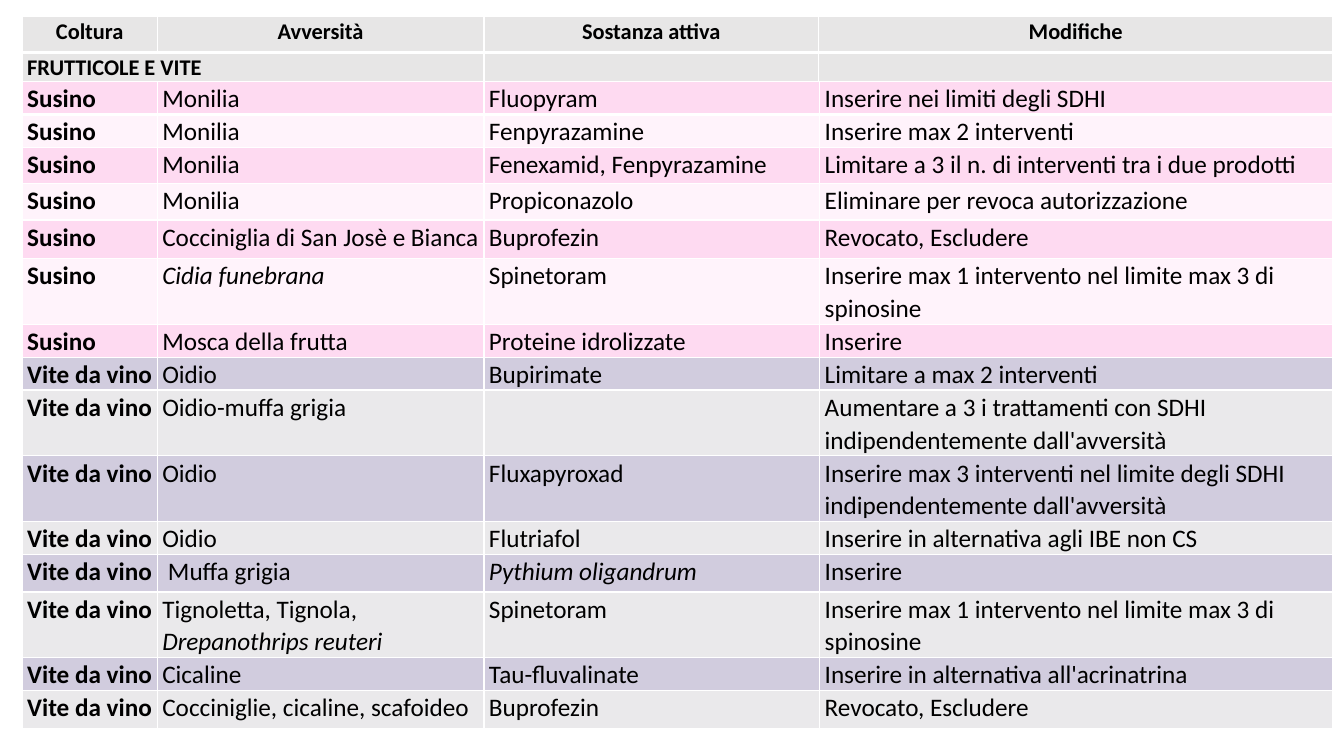
import pptx
import pptx.dml.color
import pptx.enum.text
import pptx.oxml.ns
import pptx.util
from lxml import etree

Inches = pptx.util.Inches
RGBColor = pptx.dml.color.RGBColor

BLACK = RGBColor(0x00, 0x00, 0x00)
WHITE = RGBColor(0xFF, 0xFF, 0xFF)
HEADER_GRAY = RGBColor(0xE7, 0xE6, 0xE6)
# Dark and light band of each crop
BANDS = {
    "Susino": (RGBColor(0xFE, 0xDA, 0xF1), RGBColor(0xFF, 0xF3, 0xFB)),
    "Vite da vino": (RGBColor(0xD1, 0xCC, 0xDE), RGBColor(0xEA, 0xE9, 0xEB)),
}
FONT = "Calibri"

HEADINGS = ["Coltura", "Avversità", "Sostanza attiva", "Modifiche"]
SECTION = "FRUTTICOLE E VITE"

# Row height and pest, substance, change for each crop; asterisks enclose italics
TREATMENTS = {
    "Susino": [
        (0.32, "Monilia", "Fluopyram", "Inserire nei limiti degli SDHI"),
        (0.32, "Monilia", "Fenpyrazamine", "Inserire max 2 interventi"),
        (0.36, "Monilia", "Fenexamid, Fenpyrazamine",
         "Limitare a 3 il n. di interventi tra i due prodotti"),
        (0.36, "Monilia", "Propiconazolo", "Eliminare per revoca autorizzazione"),
        (0.38, "Cocciniglia di San Josè e Bianca", "Buprofezin", "Revocato, Escludere"),
        (0.65, "*Cidia funebrana*", "Spinetoram",
         "Inserire max 1 intervento nel limite max 3 di spinosine"),
        (0.32, "Mosca della frutta", "Proteine idrolizzate", "Inserire"),
    ],
    "Vite da vino": [
        (0.32, "Oidio", "Bupirimate", "Limitare a max 2 interventi"),
        (0.65, "Oidio-muffa grigia", "",
         "Aumentare a 3 i trattamenti con SDHI indipendentemente dall'avversità"),
        (0.65, "Oidio", "Fluxapyroxad",
         "Inserire max 3 interventi nel limite degli SDHI indipendentemente dall'avversità"),
        (0.32, "Oidio", "Flutriafol", "Inserire in alternativa agli IBE non CS"),
        (0.37, " Muffa grigia", "*Pythium oligandrum*", "Inserire"),
        (0.65, "Tignoletta, Tignola, *Drepanothrips reuteri*", "Spinetoram",
         "Inserire max 1 intervento nel limite max 3 di spinosine"),
        (0.32, "Cicaline", "Tau-fluvalinate", "Inserire in alternativa all'acrinatrina"),
        (0.38, "Cocciniglie, cicaline, scafoideo", "Buprofezin", "Revocato, Escludere"),
    ],
}


def set_borders(cell, bottom_width):
    """Draw white borders, 1 pt except at the bottom."""
    properties = cell._tc.get_or_add_tcPr()
    for index, side in enumerate(("lnL", "lnR", "lnT", "lnB")):
        width = bottom_width if side == "lnB" else 1
        border = etree.Element(pptx.oxml.ns.qn("a:" + side), w=str(pptx.util.Pt(width)))
        fill = etree.SubElement(border, pptx.oxml.ns.qn("a:solidFill"))
        etree.SubElement(fill, pptx.oxml.ns.qn("a:srgbClr"), val=str(WHITE))
        properties.insert(index, border)


def fill_cell(cell, text, color, size, bold=False, align=None, bottom_width=1):
    cell.fill.solid()
    cell.fill.fore_color.rgb = color
    set_borders(cell, bottom_width)
    cell.margin_left = cell.margin_right = Inches(0.05)
    cell.margin_top = cell.margin_bottom = 0
    paragraph = cell.text_frame.paragraphs[0]
    paragraph.line_spacing = 1.07
    paragraph.alignment = align
    if not text:
        # Keep an empty cell from stretching its row
        etree.SubElement(paragraph._p, pptx.oxml.ns.qn("a:endParaRPr"), sz=str(size * 100))
    for index, part in enumerate(text.split("*")):
        if part:
            run = paragraph.add_run()
            run.text = part
            run.font.name = FONT
            run.font.size = pptx.util.Pt(size)
            run.font.bold = bold
            run.font.italic = index % 2 == 1
            run.font.color.rgb = BLACK


def add_grid(slide, left, top, widths, heights):
    """Add a plain table with the given column widths and row heights."""
    grid = slide.shapes.add_table(
        len(heights), len(widths), Inches(left), Inches(top),
        Inches(sum(widths)), Inches(sum(heights))).table
    grid.first_row = grid.horz_banding = False
    for column, width in zip(grid.columns, widths):
        column.width = Inches(width)
    for row, height in zip(grid.rows, heights):
        row.height = Inches(height)
    return grid


def add_header(slide, left, top):
    header = add_grid(slide, left, top, [1.34, 3.24, 3.32, 5.1], [0.36, 0.29])
    for column, heading in enumerate(HEADINGS):
        fill_cell(header.cell(0, column), heading, HEADER_GRAY, 16, bold=True,
                  align=pptx.enum.text.PP_ALIGN.CENTER, bottom_width=3)
        fill_cell(header.cell(1, column), "" if column else SECTION,
                  HEADER_GRAY, 16, bold=True)
    section = header.cell(1, 0)
    section.merge(header.cell(1, 1))
    section.vertical_anchor = pptx.enum.text.MSO_ANCHOR.BOTTOM


def add_treatments(slide, left, top):
    rows = [(height, BANDS[crop][index % 2], (crop, *texts))
            for crop, entries in TREATMENTS.items()
            for index, (height, *texts) in enumerate(entries)]
    treatments = add_grid(slide, left, top, [1.34, 3.24, 3.33, 5.09],
                          [height for height, _, _ in rows])
    for row, (_, color, texts) in enumerate(rows):
        for column, text in enumerate(texts):
            fill_cell(treatments.cell(row, column), text, color, 18,
                      bold=column == 0, bottom_width=1 if row else 3)


def main():
    presentation = pptx.Presentation()
    presentation.slide_width = Inches(13.33)
    presentation.slide_height = Inches(7.5)
    slide = presentation.slides.add_slide(presentation.slide_layouts[6])
    add_header(slide, 0.22, 0.16)
    add_treatments(slide, 0.22, 0.81)
    presentation.save("out.pptx")


if __name__ == "__main__":
    main()
